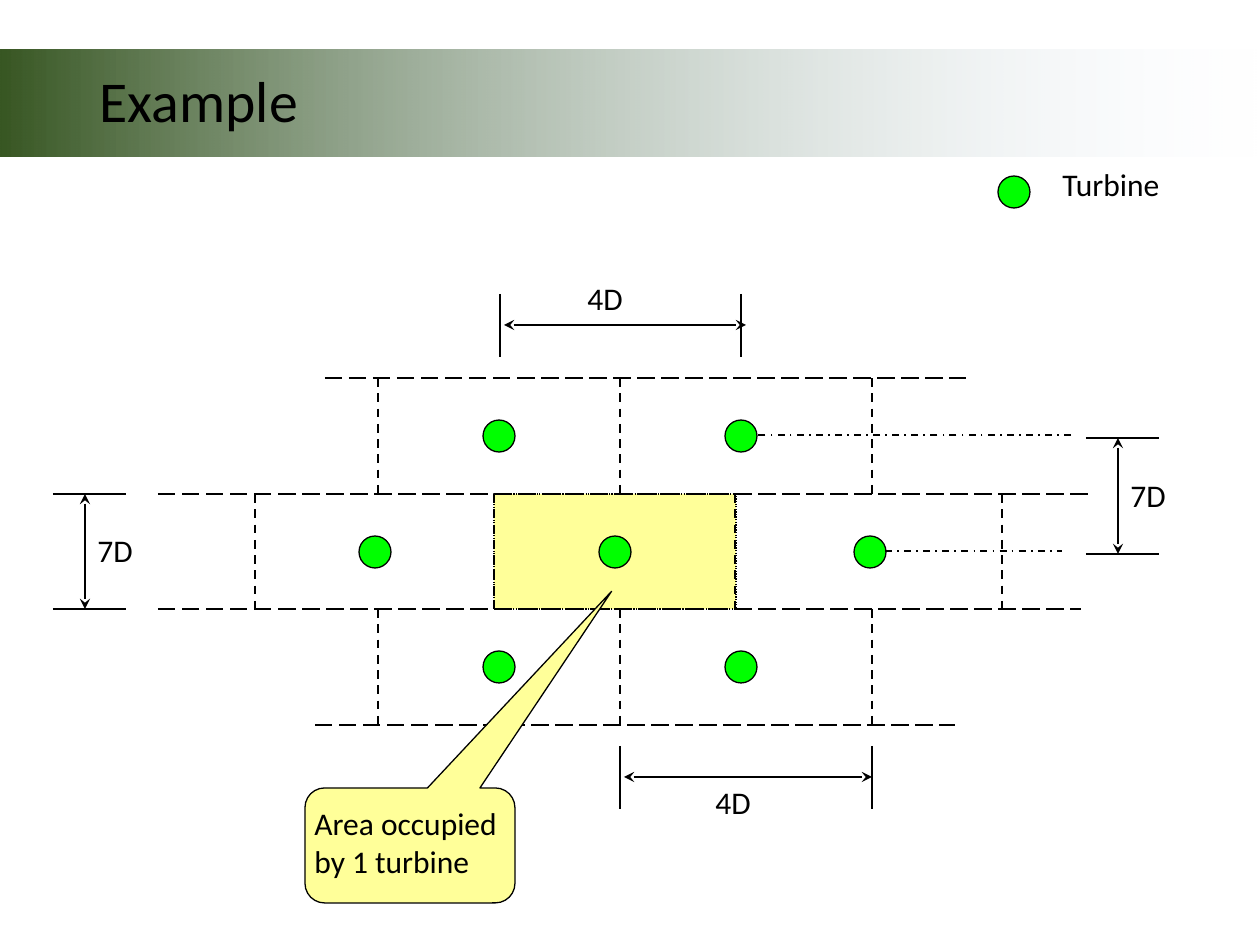
from lxml import etree
from pptx import Presentation, util as u
from pptx.dml.color import RGBColor
from pptx.enum import dml, shapes, text
from pptx.oxml.ns import qn

SCALE = 914400 / 126
BLACK, GREEN, YELLOW = "000000", "00FF00", "FFFF99"
ROWS = [378, 494, 609, 725]
ROW_EXTENTS = [(325, 966), (158, 1092), (158, 1081), (315, 955)]
OUTER_WALLS, INNER_WALLS = [378, 620, 872], [255, 494, 735, 1002]
OUTER_TURBINES, INNER_TURBINES = [483, 725], [359, 599, 854]
DASH = dml.MSO_LINE


def px(*lengths):
    return [u.Emu(round(length * SCALE)) for length in lengths]


def rgb(value):
    return RGBColor.from_string(value)


def write(frame, words, size=18, color=BLACK, font="Calibri", spacing=None,
          anchor=text.MSO_ANCHOR.TOP):
    frame.word_wrap = True
    frame.vertical_anchor = anchor
    paragraph = frame.paragraphs[0]
    paragraph.alignment = text.PP_ALIGN.LEFT
    paragraph.line_spacing = spacing
    run = paragraph.add_run()
    run.text = words
    run.font.size = u.Pt(size)
    run.font.name = font
    run.font.color.rgb = rgb(color)


class Diagram:
    def __init__(self, slide, outline=0.75, ink=BLACK):
        self.slide = slide
        self.outline = outline
        self.ink = ink

    def band(self, x, y, w, h, start, end):
        band = self.slide.shapes.add_shape(shapes.MSO_SHAPE.RECTANGLE, *px(x, y, w, h))
        band.shadow.inherit = False
        band.line.fill.background()
        band.fill.gradient()
        band.fill.gradient_angle = 0
        for stop, color in zip(band.fill.gradient_stops, (start, end)):
            stop.color.rgb = rgb(color)
        last_color = band._element.spPr.findall(".//" + qn("a:srgbClr"))[-1]
        etree.SubElement(last_color, qn("a:alpha"), val="0")

    def title(self, words, x, y, w, h):
        title = self.slide.shapes.title
        title.left, title.top, title.width, title.height = px(x, y, w, h)
        write(title.text_frame, words, size=33, spacing=0.9,
              anchor=text.MSO_ANCHOR.MIDDLE)
        self.slide.shapes._spTree.append(title._element)

    def shape(self, kind, x, y, w, h, fill, dash=None):
        shape = self.slide.shapes.add_shape(kind, *px(x, y, w, h))
        shape.shadow.inherit = False
        shape.fill.solid()
        shape.fill.fore_color.rgb = rgb(fill)
        shape.line.color.rgb = rgb(self.ink)
        shape.line.width = u.Pt(self.outline)
        shape.line.dash_style = dash
        return shape

    def turbine(self, x, y):
        self.shape(shapes.MSO_SHAPE.OVAL, x, y, 32, 32, GREEN)

    def label(self, words, x, y, w=86, h=72):
        box = self.slide.shapes.add_textbox(*px(x, y, w, h))
        write(box.text_frame, words)

    def line(self, x1, y1, x2, y2, width=None, dash=None, arrows=False):
        line = self.slide.shapes.add_connector(
            shapes.MSO_CONNECTOR.STRAIGHT, *px(x1, y1, x2, y2))
        line.line.color.rgb = rgb(self.ink)
        line.line.width = u.Pt(width or self.outline)
        line.line.dash_style = dash
        if arrows:
            for end in ("a:headEnd", "a:tailEnd"):
                etree.SubElement(line.line._get_or_add_ln(), qn(end), type="stealth")
        etree.SubElement(line._element.spPr, qn("a:effectLst"))

    def width_mark(self, words, left, right, top, tip, label_at):
        for x in (left, right):
            self.line(x, top, x, top + 63)
        self.line(left + 4, top + 31, tip, top + 31, arrows=True)
        self.label(words, *label_at)

    def height_mark(self, words, left, top, bottom, label_y):
        for y in (top, bottom):
            self.line(left, y, left + 73, y)
        self.line(left + 32, top, left + 32, bottom, arrows=True)
        self.label(words, left + 32, label_y)

    def callout(self, words, x, y, w, h):
        bubble = self.shape(shapes.MSO_SHAPE.ROUNDED_RECTANGULAR_CALLOUT, x, y, w, h, YELLOW)
        for index, value in enumerate((0.96, -2.21, 0.17)):
            bubble.adjustments[index] = value
        self.label(words, x - 3, y + 10, 233, 90)


def main():
    deck = Presentation()
    deck.slide_width, deck.slide_height = px(1260, 945)
    farm = Diagram(deck.slides.add_slide(deck.slide_layouts[5]))

    farm.band(0, 50, 1260, 107, "385723", "E1EBFB")
    farm.title("Example", 87, 50, 1086, 107)
    farm.shape(shapes.MSO_SHAPE.RECTANGLE, 494, 494, 242, 115, YELLOW, DASH.ROUND_DOT)
    farm.turbine(998, 176)
    farm.label("Turbine", 1050, 159, 180)

    for y, (left, right) in zip(ROWS, ROW_EXTENTS):
        farm.line(left, y, right, y, 1.25, DASH.LONG_DASH)
    walls = [OUTER_WALLS, INNER_WALLS, OUTER_WALLS]
    turbines = [OUTER_TURBINES, INNER_TURBINES, OUTER_TURBINES]
    for top, bottom, wall_xs, turbine_xs in zip(ROWS, ROWS[1:], walls, turbines):
        for x in wall_xs:
            farm.line(x, top, x, bottom, 1.25, DASH.DASH)
        for x in turbine_xs:
            farm.turbine(x, top + 42)

    farm.height_mark("7D", 1086, 438, 554, 470)
    farm.line(885, 551, 1062, 551, 1, DASH.DASH_DOT)
    farm.line(1071, 435, 756, 435, 1, DASH.DASH_DOT)
    farm.width_mark("4D", 500, 741, 294, 746, (575, 273))
    farm.width_mark("4D", 620, 872, 746, 872, (703, 777))
    farm.callout("Area occupied by 1 turbine", 305, 788, 210, 115)
    farm.height_mark("7D", 53, 494, 609, 525)

    deck.save("out.pptx")


if __name__ == "__main__":
    main()
